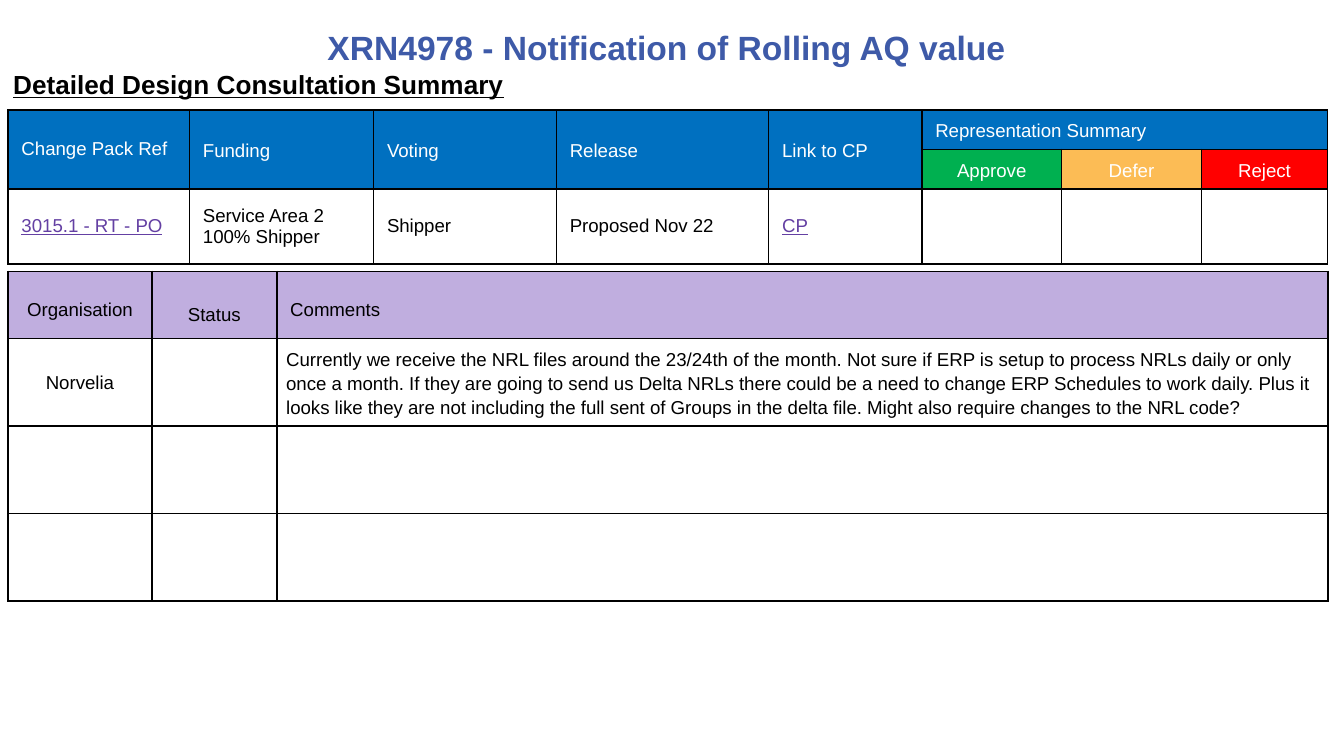
from dataclasses import dataclass
from typing import Optional

from lxml.etree import SubElement
from pptx import Presentation
from pptx.dml.color import RGBColor
from pptx.enum.text import MSO_ANCHOR, PP_ALIGN
from pptx.oxml.ns import qn
from pptx.util import Inches, Pt


@dataclass(frozen=True)
class Theme:
    font: str = "Arial"
    title: str = "3E5AA8"
    ink: str = "000000"
    pale: str = "FFFFFF"
    head: str = "0070C0"
    yes: str = "00B050"
    wait: str = "FCBC55"
    no: str = "FF0000"
    lilac: str = "C0AEDF"
    link: str = "6440A3"
    big: int = 18
    mid: int = 14
    small: int = 10


T = Theme()
MID, TOP = MSO_ANCHOR.MIDDLE, MSO_ANCHOR.TOP
LEFT, MIDDLE = PP_ALIGN.LEFT, PP_ALIGN.CENTER


@dataclass(frozen=True)
class Cell:
    text: str = ""
    fill: Optional[str] = None
    color: str = T.ink
    align: PP_ALIGN = LEFT
    space: float = 1.0
    line: bool = False
    anchor: MSO_ANCHOR = MID
    pad: tuple = (0.1, 0.05, 0.1, 0.05)  # left, top, right, bottom
    span: tuple = (1, 1)  # rows, columns


def style(frame, size: int, color: str, align=LEFT, space=1.0,
          bold=False, line=False) -> None:
    for para in frame.paragraphs:
        para.alignment = align
        para.line_spacing = space
        for run in para.runs:
            font = run.font
            font.name, font.size = T.font, Pt(size)
            font.bold, font.underline = bold, line
            font.color.rgb = RGBColor.from_string(color)


def add_text(slide, box: tuple, text: str, size: int, color: str,
             align=LEFT, anchor=TOP, line=False) -> None:
    frame = slide.shapes.add_textbox(*map(Inches, box)).text_frame
    frame.word_wrap = True
    frame.vertical_anchor = anchor
    frame.text = text
    style(frame, size, color, align, bold=True, line=line)


def add_edges(cell) -> None:
    props = cell._tc.get_or_add_tcPr()
    for side in ("a:lnL", "a:lnR", "a:lnT", "a:lnB"):
        edge = SubElement(props, qn(side), w=str(Pt(1)))
        fill = SubElement(edge, qn("a:solidFill"))
        SubElement(fill, qn("a:srgbClr"), val=T.ink)


def fill_cell(cell, data: Cell) -> None:
    pads = [Inches(x) for x in data.pad]
    (cell.margin_left, cell.margin_top,
     cell.margin_right, cell.margin_bottom) = pads
    cell.vertical_anchor = data.anchor
    if data.fill:
        cell.fill.solid()
        cell.fill.fore_color.rgb = RGBColor.from_string(data.fill)
    else:
        cell.fill.background()
    cell.text_frame.text = data.text
    style(cell.text_frame, T.small, data.color, data.align, data.space,
          line=data.line)


def add_grid(slide, left: float, top: float, cols: list, rows: list,
             cells: list) -> None:
    box = map(Inches, (left, top, sum(cols), sum(rows)))
    grid = slide.shapes.add_table(len(rows), len(cols), *box).table
    grid.first_row = grid.horz_banding = False
    for col, width in zip(grid.columns, cols):
        col.width = Inches(width)
    for row, height in zip(grid.rows, rows):
        row.height = Inches(height)
    for r, line in enumerate(cells):
        for c, data in enumerate(line):
            cell = grid.cell(r, c)
            add_edges(cell)
            fill_cell(cell, data)
            down, wide = data.span
            if data.span != (1, 1):
                cell.merge(grid.cell(r + down - 1, c + wide - 1))


def head(text: str, span=(2, 1), space=1.15) -> Cell:
    return Cell(text, T.head, T.pale, space=space, span=span)


def vote(text: str, fill: str) -> Cell:
    return Cell(text, fill, T.pale, MIDDLE, 1.15)


def link(text: str) -> Cell:
    return Cell(text, color=T.link, line=True)


def label(text: str, align=MIDDLE) -> Cell:
    return Cell(text, T.lilac, align=align, anchor=TOP,
                pad=(0.1, 0.21, 0.1, 0.05))


def main() -> None:
    # Widescreen page, 16 to 9
    deck = Presentation()
    deck.slide_width = Inches(10)
    deck.slide_height = deck.slide_width * 9 // 16
    slide = deck.slides.add_slide(deck.slide_layouts[6])

    # Headings
    add_text(slide, (0.06, 0.04, 9.87, 0.62),
             "XRN4978 - Notification of Rolling AQ value ",
             T.big, T.title, MIDDLE, MID)
    add_text(slide, (0, 0.46, 4.77, 0.34),
             "Detailed Design Consultation Summary",
             T.mid, T.ink, line=True)

    # Change summary
    names = ["Funding", "Voting", "Release", "Link to CP"]
    blank, under = Cell(), Cell(fill=T.head)
    add_grid(
        slide, 0.06, 0.82,
        [1.35, 1.37, 1.36, 1.58, 1.14, 1.04, 1.04, 0.94],
        [0.26, 0.26, 0.56],
        [
            [head("Change Pack Ref", space=1.0), *map(head, names),
             head("Representation Summary", (1, 3)), under, under],
            [under] * 5 + [vote("Approve", T.yes), vote("Defer", T.wait),
                           vote("Reject", T.no)],
            [link("3015.1 - RT - PO"), Cell("Service Area 2\n100% Shipper"),
             Cell("Shipper"), Cell("Proposed Nov 22"), link("CP")]
            + [blank] * 3,
        ])

    # Responses
    note = (
        "Currently we receive the NRL files around the 23/24th of the month. "
        "Not sure if ERP is setup to process NRLs daily or only once a month. "
        "If they are going to send us Delta NRLs there could be a need to "
        "change ERP Schedules to work daily. Plus it looks like they are not "
        "including the full sent of Groups in the delta file. Might also "
        "require changes to the NRL code?")
    add_grid(
        slide, 0.06, 2.02, [1.07, 0.93, 7.82], [0.5, 0.65, 0.65, 0.65],
        [
            [label("Organisation"),
             Cell("Status", T.lilac, align=MIDDLE, pad=(0.06, 0.15, 0.06, 0)),
             label("Comments", LEFT)],
            [Cell("Norvelia", align=MIDDLE, pad=(0.01, 0.01, 0.01, 0)), blank,
             Cell(note, space=1.15, pad=(0.07, 0, 0.07, 0))],
            [blank] * 3,
            [blank] * 3,
        ])

    deck.save("out.pptx")


if __name__ == "__main__":
    main()
